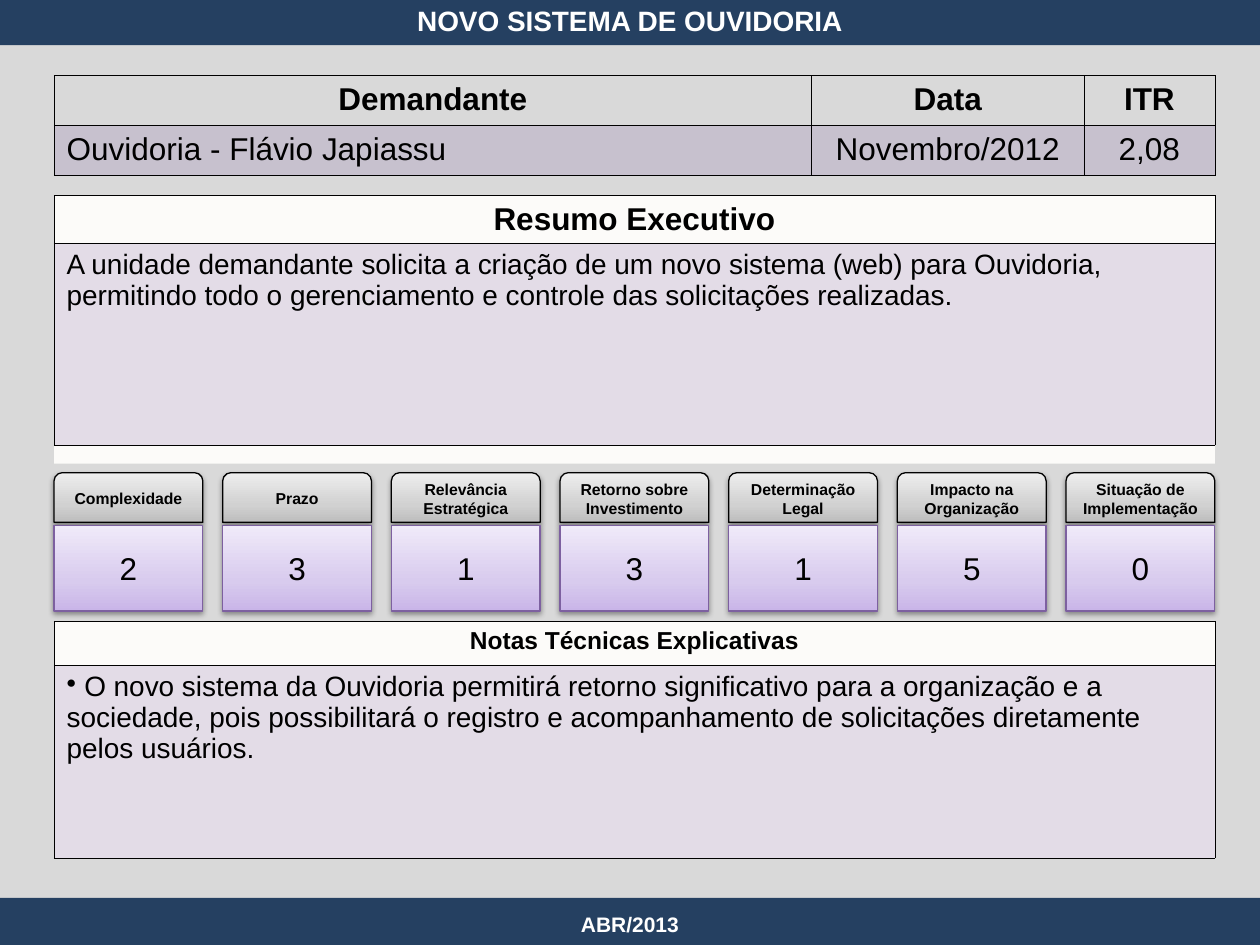
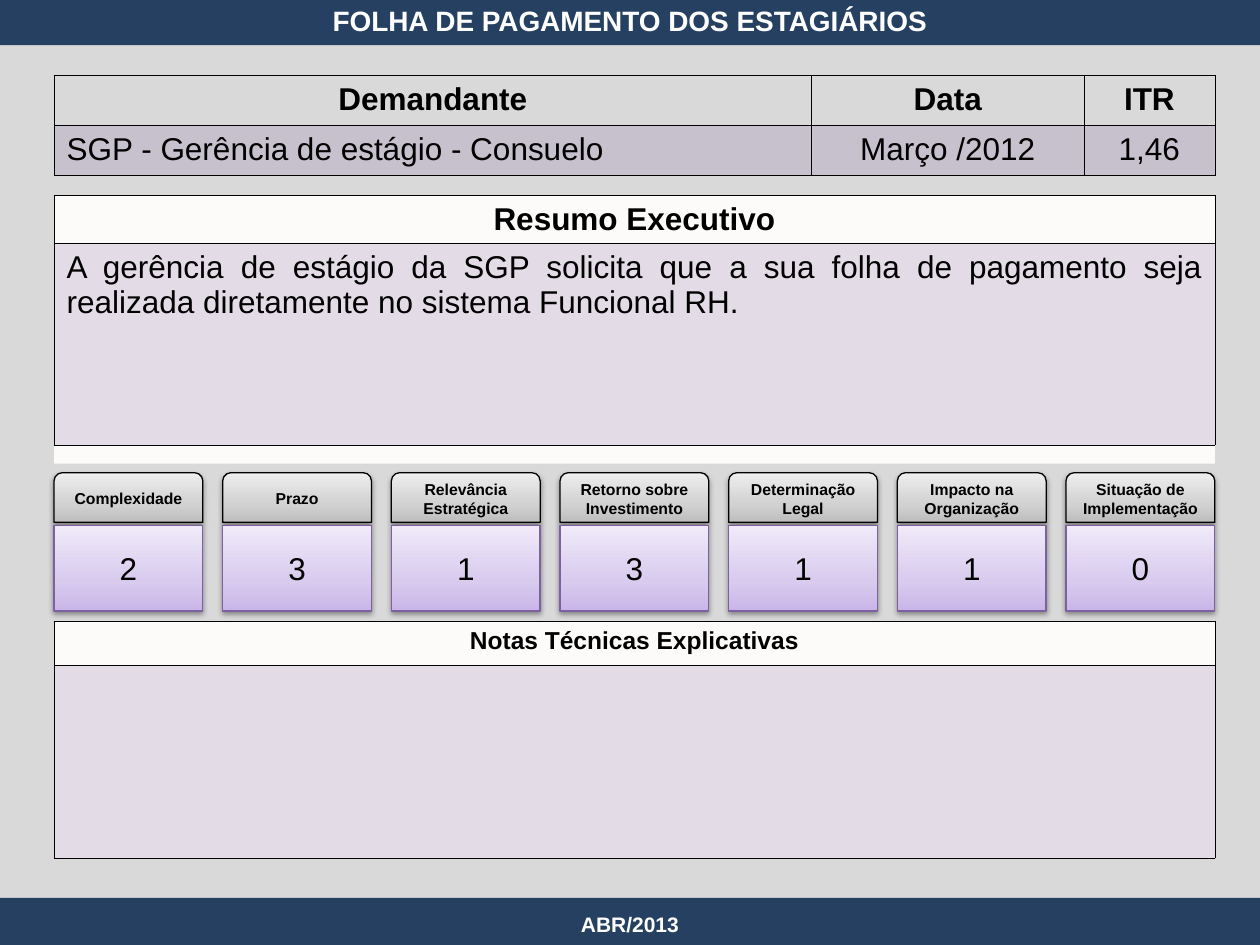
from pptx import Presentation
from pptx import util as u
from pptx.dml.color import RGBColor
from pptx.enum import shapes, text
from pptx.oxml import parse_xml
from pptx.oxml.ns import nsdecls, qn

NAVY, GREY, IVORY, PURPLE = "254061", "D9D9D9", "FCFBF9", "8064A2"
BLACK, WHITE = "000000", "FFFFFF"
CENTER, LEFT, JUSTIFY = text.PP_ALIGN.CENTER, text.PP_ALIGN.LEFT, text.PP_ALIGN.JUSTIFY
SHADOW = (
    '<a:outerShdw {} blurRad="{}" dist="{}" dir="{}" rotWithShape="0">'
    '<a:srgbClr val="000000"><a:alpha val="{}"/></a:srgbClr></a:outerShdw>'
)
CARD_SHADOW = SHADOW.format(nsdecls("a"), 40000, 20000, 5400000, 38000)
TEXT_SHADOW = SHADOW.format(nsdecls("a"), 38100, 38100, 2700000, 43000)
MARGIN, CONTENT_WIDTH = 1.09, 23.4
CARD_WIDTH = 3
CRITERIA = [
    "Complexidade", "Prazo", "Relevância Estratégica", "Retorno sobre Investimento",
    "Determinação Legal", "Impacto na Organização", "Situação de Implementação",
]
PROJECTS = [
    {
        "title": "NOVO SISTEMA DE OUVIDORIA",
        "request": ["Ouvidoria - Flávio Japiassu", "Novembro/2012", "2,08"],
        "summary": "A unidade demandante solicita a criação de um novo sistema (web) para Ouvidoria, "
                   "permitindo todo o gerenciamento e controle das solicitações realizadas.",
        "summary_format": (16, LEFT),
        "notes": " O novo sistema da Ouvidoria permitirá retorno significativo para a organização e a "
                 "sociedade, pois possibilitará o registro e acompanhamento de solicitações diretamente "
                 "pelos usuários.",
        "scores": [2, 3, 1, 3, 1, 5, 0],
    },
    {
        "title": "FOLHA DE PAGAMENTO DOS ESTAGIÁRIOS",
        "request": ["SGP - Gerência de estágio - Consuelo", "Março /2012", "1,46"],
        "summary": "A gerência de estágio da SGP solicita que a sua folha de pagamento seja "
                   "realizada diretamente no sistema Funcional RH.",
        "summary_format": (18, JUSTIFY),
        "notes": "",
        "scores": [2, 3, 1, 3, 1, 1, 0],
    },
]


def paint(target, color):
    if hasattr(target, "solid"):
        target.solid()
        target.fore_color.rgb = RGBColor.from_string(color)
    else:
        target.rgb = RGBColor.from_string(color)


def write(frame, content, size, bold=False, color=BLACK, align=CENTER, shadow=False):
    frame.word_wrap = True
    paragraph = frame.paragraphs[0]
    paragraph.alignment = align
    run = paragraph.add_run()
    run.text = content
    run.font.size = u.Pt(size)
    run.font.bold = bold
    run.font.name = "Arial"
    paint(run.font.color, color)
    if shadow:
        effects = parse_xml(f"<a:effectLst {nsdecls('a')}/>")
        effects.append(parse_xml(TEXT_SHADOW))
        run.font.fill._xPr.find(qn("a:solidFill")).addnext(effects)


presentation = Presentation()
presentation.slide_width = u.Cm(25.4)
presentation.slide_height = u.Cm(19.05)
layout = presentation.slide_layouts[5]
slides = [presentation.slides.add_slide(layout) for project in PROJECTS]

shared = []
for top, height, color in [(0.91, 17.4, GREY), (18.1, 0.95, NAVY), (-0.03, 0.94, NAVY)]:
    band = slides[0].shapes.add_shape(
        shapes.MSO_SHAPE.RECTANGLE, 0, u.Cm(top), u.Cm(25.4), u.Cm(height))
    band.shadow.inherit = False
    paint(band.fill, color)
    band.line.fill.background()
    shared.append(band)
footer = slides[0].shapes.add_textbox(0, u.Cm(18.14), u.Cm(25.4), u.Cm(0.99))
footer.text_frame.vertical_anchor = text.MSO_ANCHOR.MIDDLE
write(footer.text_frame, "ABR/2013", 12, True, WHITE, shadow=True)
shared.append(footer)
for shape in shared:
    layout.shapes.element.append(shape.element)

for slide, project in zip(slides, PROJECTS):
    title = slide.shapes.title
    title.left, title.top, title.width, title.height = 0, u.Cm(-0.28), u.Cm(25.4), u.Cm(1.4)
    title.text_frame.vertical_anchor = text.MSO_ANCHOR.MIDDLE
    write(title.text_frame, project["title"], 16, True, WHITE, shadow=True)

    for top, height in [(3.94, 5.41), (12.52, 4.79)]:
        backdrop = slide.shapes.add_shape(
            shapes.MSO_SHAPE.RECTANGLE, u.Cm(MARGIN), u.Cm(top), u.Cm(CONTENT_WIDTH), u.Cm(height))
        backdrop.shadow.inherit = False
        paint(backdrop.fill, IVORY)
        backdrop.line.fill.background()

    summary_size, summary_align = project["summary_format"]
    tables = [
        (1.52, [15.27, 5.49, 2.64], [1.01, 1.01], ["Demandante", "Data", "ITR"], 18,
         project["request"], 18, [LEFT, CENTER, CENTER]),
        (3.94, [CONTENT_WIDTH], [0.96, 4.07], ["Resumo Executivo"], 18,
         [project["summary"]], summary_size, [summary_align]),
        (12.52, [CONTENT_WIDTH], [0.89, 3.89], ["Notas Técnicas Explicativas"], 14,
         [project["notes"]], 16, [LEFT]),
    ]
    for top, widths, heights, headings, heading_size, values, value_size, aligns in tables:
        table = slide.shapes.add_table(
            2, len(widths), u.Cm(MARGIN), u.Cm(top), u.Cm(CONTENT_WIDTH), u.Cm(sum(heights))).table
        table.first_row = table.horz_banding = False
        for row, height in zip(table.rows, heights):
            row.height = u.Cm(height)
        for index, width in enumerate(widths):
            table.columns[index].width = u.Cm(width)
            heading, value = table.cell(0, index), table.cell(1, index)
            for cell in (heading, value):
                properties = cell._tc.get_or_add_tcPr()
                for side in ("lnL", "lnR", "lnT", "lnB"):
                    properties.append(parse_xml(
                        f'<a:{side} {nsdecls("a")} w="3175"><a:solidFill>'
                        f'<a:srgbClr val="{BLACK}"/></a:solidFill></a:{side}>'))
            heading.fill.background()
            paint(value.fill, PURPLE)
            tint = value._tc.tcPr.find(qn("a:solidFill"))[0]
            tint.append(parse_xml(f'<a:alpha {nsdecls("a")} val="20000"/>'))
            write(heading.text_frame, headings[index], heading_size, True)
            if values[index]:
                if values[index] == project["notes"]:
                    bullet = value.text_frame.paragraphs[0]._p.get_or_add_pPr()
                    bullet.set("marL", "0")
                    bullet.set("indent", "0")
                    bullet.append(parse_xml(f'<a:buChar {nsdecls("a")} char="•"/>'))
                write(value.text_frame, values[index], value_size, align=aligns[index])

    pitch = (CONTENT_WIDTH - CARD_WIDTH) / (len(CRITERIA) - 1)
    for index, (criterion, score) in enumerate(zip(CRITERIA, project["scores"])):
        cards = [
            (shapes.MSO_SHAPE.ROUND_2_SAME_RECTANGLE, 9.53, 1, criterion, 9, True,
             BLACK, ["BDBDBD", "D1D1D1", "EEEEEE"]),
            (shapes.MSO_SHAPE.RECTANGLE, 10.59, 1.73, str(score), 18, False,
             "7D60A0", ["C9B5E8", "D8CBEE", "F0EAF9"]),
        ]
        for kind, top, height, label, size, bold, outline, gradient in cards:
            card = slide.shapes.add_shape(
                kind, u.Cm(MARGIN + index * pitch), u.Cm(top), u.Cm(CARD_WIDTH), u.Cm(height))
            card.fill.gradient()
            card.fill.gradient_angle = 90
            stops = card.element.spPr.find(".//" + qn("a:gsLst"))
            stops.clear()
            for position, color in zip((0, 35000, 100000), gradient):
                stops.append(parse_xml(
                    f'<a:gs {nsdecls("a")} pos="{position}"><a:srgbClr val="{color}"/></a:gs>'))
            paint(card.line.fill, outline)
            card.line.width = u.Pt(0.75)
            card.shadow.inherit = False
            card.element.spPr.find(qn("a:effectLst")).append(parse_xml(CARD_SHADOW))
            write(card.text_frame, label, size, bold)

presentation.save("out.pptx")
